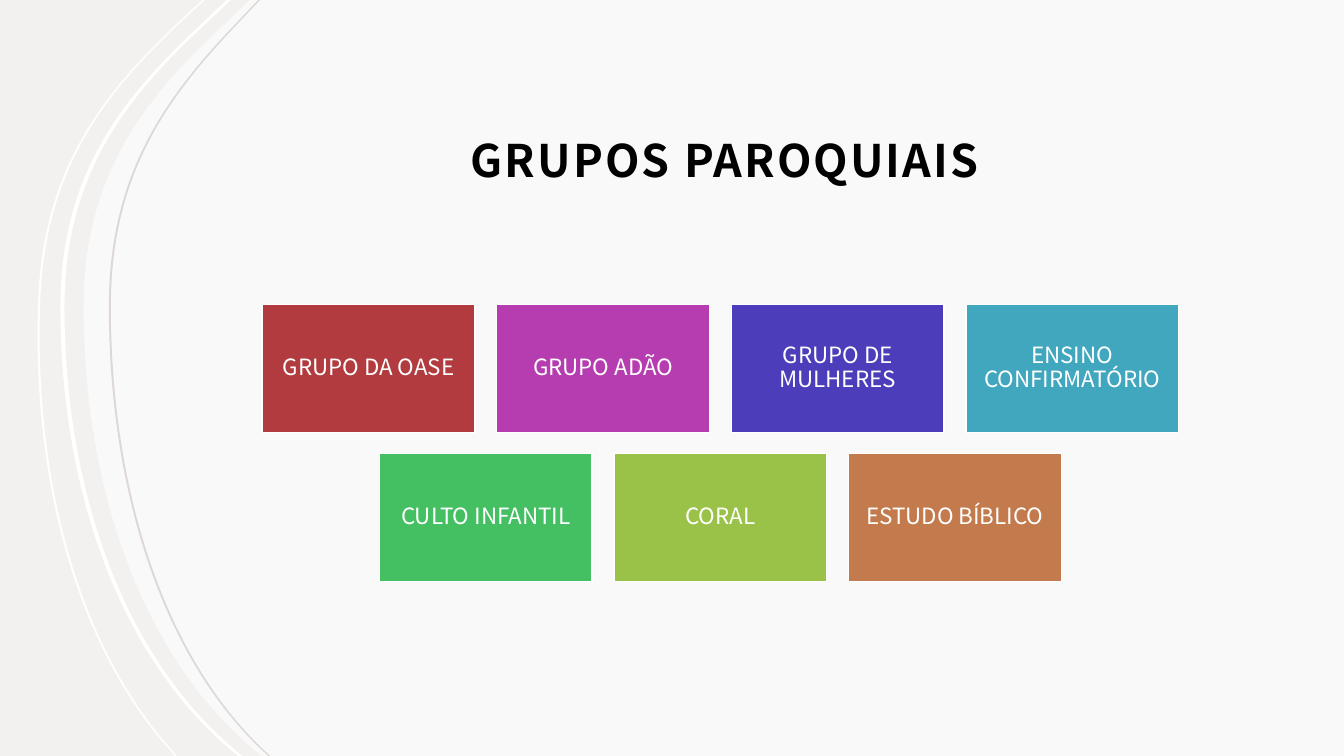
from lxml.etree import SubElement
from pptx import Presentation
from pptx.dml.color import RGBColor
from pptx.enum.shapes import MSO_SHAPE as Preset
from pptx.enum.text import MSO_ANCHOR as Anchor, PP_ALIGN as Align
from pptx.oxml.ns import qn
from pptx.util import Inches, Pt

FONT = "Noto Sans CJK JP"
WIDTH, HEIGHT = 13.33, 7.5
UNITS = 1000
WHITE = RGBColor(0xFF, 0xFF, 0xFF)
BLACK = RGBColor(0x00, 0x00, 0x00)
PAPER = RGBColor(0xF3, 0xF1, 0xF0)
GREY = RGBColor(0xDE, 0xD8, 0xD5)
RED = RGBColor(0xB1, 0x3B, 0x3E)
MAGENTA = RGBColor(0xB5, 0x3D, 0xB0)
INDIGO = RGBColor(0x4C, 0x3E, 0xBA)
TEAL = RGBColor(0x40, 0xA7, 0xBE)
GREEN = RGBColor(0x44, 0xC0, 0x63)
LIME = RGBColor(0x9B, 0xC2, 0x48)
ORANGE = RGBColor(0xC3, 0x7B, 0x4D)

PANEL_EDGE = [(2.48, 0), (2.11, 0.35), (1.39, 1.04), (0.83, 1.79), (0.83, 3.04),
              (0.83, 4.92), (1.45, 6.57), (2.57, 7.48), (2.59, 7.5)]
OUTER_EDGE = [(2.03, 0), (1.77, 0.24), (1.04, 0.93), (0.45, 1.68), (0.4, 2.97),
              (0.33, 4.8), (0.8, 6.45), (1.73, 7.47), (1.75, 7.5)]
INNER_EDGE = [(2.58, 0), (2.25, 0.35), (1.61, 1.04), (1.1, 1.79), (1.1, 3.04),
              (1.1, 4.92), (1.66, 6.57), (2.66, 7.48), (2.68, 7.5)]
EDGE_CURVES = (2, 5)
BAND_CURVES = (2, 5, 11, 14)

GROUP_ROWS = [
    [("GRUPO DA OASE", RED), ("GRUPO ADÃO", MAGENTA),
     ("GRUPO DE MULHERES", INDIGO), ("ENSINO CONFIRMATÓRIO", TEAL)],
    [("CULTO INFANTIL", GREEN), ("CORAL", LIME), ("ESTUDO BÍBLICO", ORANGE)],
]
CARD_W, CARD_H = 2.11, 1.27
CARDS_LEFT, CARDS_TOP = 2.6, 3.02
PITCH_X, PITCH_Y = 6.98 / 3, 1.48


def shift(points, dx):
    return [(x + dx, y) for x, y in points]


def bend(outline, curve_starts):
    steps = list(next(outline._element.spPr.iter(qn("a:path"))))
    for start in curve_starts:
        curve = SubElement(steps[start].getparent(), qn("a:cubicBezTo"))
        steps[start].addprevious(curve)
        for step in steps[start:start + 3]:
            curve.append(step[0])
            step.getparent().remove(step)


def add_outline(slide, points, curve_starts, color, opacity=None):
    grid = [(round(x * UNITS), round(y * UNITS)) for x, y in points]
    builder = slide.shapes.build_freeform(*grid[0], scale=Inches(1) / UNITS)
    builder.add_line_segments(grid[1:], close=True)
    outline = builder.convert_to_shape()
    bend(outline, curve_starts)
    outline.shadow.inherit = False
    outline.fill.solid()
    outline.fill.fore_color.rgb = color
    outline.line.fill.background()
    if opacity is not None:
        tint = next(outline._element.spPr.iter(qn("a:srgbClr")))
        SubElement(tint, qn("a:alpha")).set("val", str(opacity * 1000))


def add_band(slide, edge, thickness, color):
    add_outline(slide, edge + shift(edge, -thickness)[::-1], BAND_CURVES, color)


def write(holder, text, size, color, insets, anchor=Anchor.MIDDLE, bold=False,
          line_spacing=0.9, tracking=0):
    frame = holder.text_frame
    frame.word_wrap = True
    frame.vertical_anchor = anchor
    (frame.margin_left, frame.margin_top,
     frame.margin_right, frame.margin_bottom) = map(Inches, insets)
    paragraph = frame.paragraphs[0]
    paragraph.alignment = Align.CENTER
    paragraph.line_spacing = line_spacing
    run = paragraph.add_run()
    run.text = text
    run.font.name = FONT
    run.font.size = Pt(size)
    run.font.bold = bold
    run.font.color.rgb = color
    if tracking:
        run.font._element.set("spc", str(int(tracking * 100)))


def add_card(slide, left, top, label, color):
    card = slide.shapes.add_shape(Preset.RECTANGLE, Inches(left), Inches(top),
                                  Inches(CARD_W), Inches(CARD_H))
    card.shadow.inherit = False
    card.fill.solid()
    card.fill.fore_color.rgb = color
    card.line.color.rgb = WHITE
    card.line.width = Pt(1)
    write(card, label, 16, WHITE, [0.07] * 4)


def main():
    deck = Presentation()
    deck.slide_width, deck.slide_height = Inches(WIDTH), Inches(HEIGHT)
    slide = deck.slides.add_slide(deck.slide_layouts[6])
    slide.background.fill.solid()
    slide.background.fill.fore_color.rgb = PAPER

    add_outline(slide, PANEL_EDGE + [(WIDTH, HEIGHT), (WIDTH, 0)], EDGE_CURVES,
                WHITE, opacity=60)
    add_band(slide, OUTER_EDGE, 0.02, WHITE)
    add_band(slide, shift(PANEL_EDGE, -0.19), 0.04, WHITE)
    add_band(slide, INNER_EDGE, 0.02, GREY)

    title = slide.shapes.add_textbox(Inches(2.6), Inches(0.48), Inches(9.18), Inches(1.47))
    write(title, "GRUPOS PAROQUIAIS", 32, BLACK, (0.12, 0.12, 0.12, 0.1),
          anchor=Anchor.BOTTOM, bold=True, line_spacing=1.3, tracking=1.5)

    for row, groups in enumerate(GROUP_ROWS):
        indent = (len(GROUP_ROWS[0]) - len(groups)) * PITCH_X / 2
        for column, (label, color) in enumerate(groups):
            add_card(slide, CARDS_LEFT + indent + column * PITCH_X,
                     CARDS_TOP + row * PITCH_Y, label, color)

    deck.save("out.pptx")


if __name__ == "__main__":
    main()
